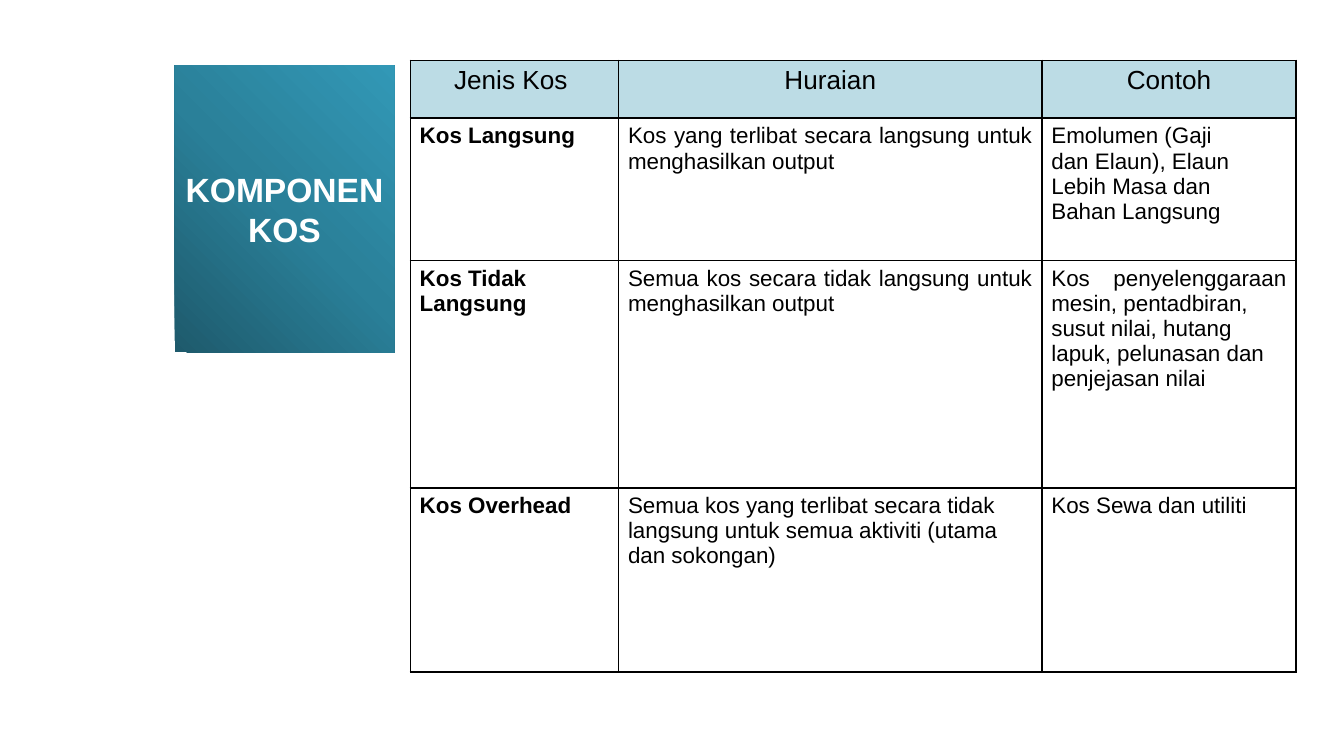
import copy

import pptx
import pptx.dml.color
import pptx.enum.text
import pptx.oxml
import pptx.oxml.ns
import pptx.util

Inches, Pt = pptx.util.Inches, pptx.util.Pt
ALIGN = pptx.enum.text.PP_ALIGN

SLIDE_W = 10
SLIDE_H = SLIDE_W * 9 / 16
FONT = "Arial"
COLORS = {
    "text": "000000",
    "title": "FFFFFF",
    "header": "BCDCE5",
    "dark": "1E5A6C",
    "middle": "2A8099",
    "light": "3298B6",
}
TITLE_BOX = (13, 8.7, 16.35, 37.9)  # percent of the slide's size
TABLE_BOX = (30.53, 8, 66, 80.9)
COLUMN_WIDTHS = (1.55, 3.15, 1.89)
ROW_HEIGHTS = (0.43, 1.06, 1.69, 1.37)

HEADERS = ("Jenis Kos ", "Huraian", "Contoh")
COST_ROWS = (
    (
        ("Kos Langsung",),
        ("Kos yang terlibat secara langsung untuk menghasilkan output",),
        ("Emolumen (Gaji ", "dan Elaun), Elaun ", "Lebih Masa dan ", "Bahan Langsung"),
    ),
    (
        ("Kos Tidak", "Langsung"),
        ("Semua kos secara tidak langsung untuk menghasilkan output",),
        ("Kos penyelenggaraan mesin, pentadbiran, ", "susut nilai, hutang ",
         "lapuk, pelunasan dan ", "penjejasan nilai"),
    ),
    (
        ("Kos Overhead",),
        ("Semua kos yang terlibat secara tidak ",
         "langsung untuk semua aktiviti (utama", "dan sokongan)"),
        ("Kos Sewa dan utiliti",),
    ),
)


def rgb(name):
    return pptx.dml.color.RGBColor.from_string(COLORS[name])


def place(box):
    """Turn percentages of the slide into left, top, width and height."""
    return [Inches(share * side / 100)
            for share, side in zip(box, (SLIDE_W, SLIDE_H) * 2)]


def set_margins(holder):
    holder.margin_left = holder.margin_right = Inches(0.07)
    holder.margin_top = holder.margin_bottom = Inches(0.04)


def write(frame, lines, size, align, color="text", bold=False):
    for index, line in enumerate(lines):
        paragraph = frame.paragraphs[0] if index == 0 else frame.add_paragraph()
        paragraph.alignment = align
        run = paragraph.add_run()
        run.text = line
        run.font.name = FONT
        run.font.size = Pt(size)
        run.font.bold = bold
        run.font.color.rgb = rgb(color)


def fill_gradient(shape, names, angle):
    """Spread the named colours evenly along a linear gradient."""
    shape.fill.gradient()
    shape.fill.gradient_angle = angle
    stop_list = shape.element.spPr.find(".//" + pptx.oxml.ns.qn("a:gsLst"))
    while len(stop_list) < len(names):
        stop_list.append(copy.deepcopy(stop_list[0]))
    for index, (stop, name) in enumerate(zip(shape.fill.gradient_stops, names)):
        stop.position = index / (len(names) - 1)
        stop.color.rgb = rgb(name)


def add_borders(cell):
    properties = cell._tc.get_or_add_tcPr()
    for index, side in enumerate(("lnL", "lnR", "lnT", "lnB")):
        properties.insert(index, pptx.oxml.parse_xml(
            f'<a:{side} {pptx.oxml.ns.nsdecls("a")} w="{Pt(1)}"><a:solidFill>'
            f'<a:srgbClr val="{COLORS["text"]}"/></a:solidFill></a:{side}>'))


def format_title(title):
    title.left, title.top, title.width, title.height = place(TITLE_BOX)
    fill_gradient(title, ("dark", "middle", "light"), 45)
    frame = title.text_frame
    frame.word_wrap = True
    frame.auto_size = pptx.enum.text.MSO_AUTO_SIZE.NONE
    frame.vertical_anchor = pptx.enum.text.MSO_ANCHOR.MIDDLE
    set_margins(frame)
    write(frame, ["KOMPONEN KOS"], 18, ALIGN.CENTER, "title", bold=True)


def add_cost_table(slide):
    table = slide.shapes.add_table(
        len(ROW_HEIGHTS), len(COLUMN_WIDTHS), *place(TABLE_BOX)).table
    table.horz_banding = False
    for column, width in zip(table.columns, COLUMN_WIDTHS):
        column.width = Inches(width)
    for row, height in zip(table.rows, ROW_HEIGHTS):
        row.height = Inches(height)
    for cell in table.iter_cells():
        set_margins(cell)
        cell.fill.background()
        add_borders(cell)
    for column, header in enumerate(HEADERS):
        cell = table.cell(0, column)
        cell.fill.solid()
        cell.fill.fore_color.rgb = rgb("header")
        write(cell.text_frame, [header], 14, ALIGN.CENTER)
    for row, cost in enumerate(COST_ROWS, start=1):
        for column, lines in enumerate(cost):
            is_name = column == 0
            write(table.cell(row, column).text_frame, lines, 12,
                  ALIGN.LEFT if is_name else ALIGN.JUSTIFY, bold=is_name)


def main():
    presentation = pptx.Presentation()
    presentation.slide_width = Inches(SLIDE_W)
    presentation.slide_height = Inches(SLIDE_H)
    title_only = presentation.slide_layouts[5]
    slide = presentation.slides.add_slide(title_only)
    format_title(slide.shapes.title)
    add_cost_table(slide)
    presentation.save("out.pptx")


if __name__ == "__main__":
    main()
